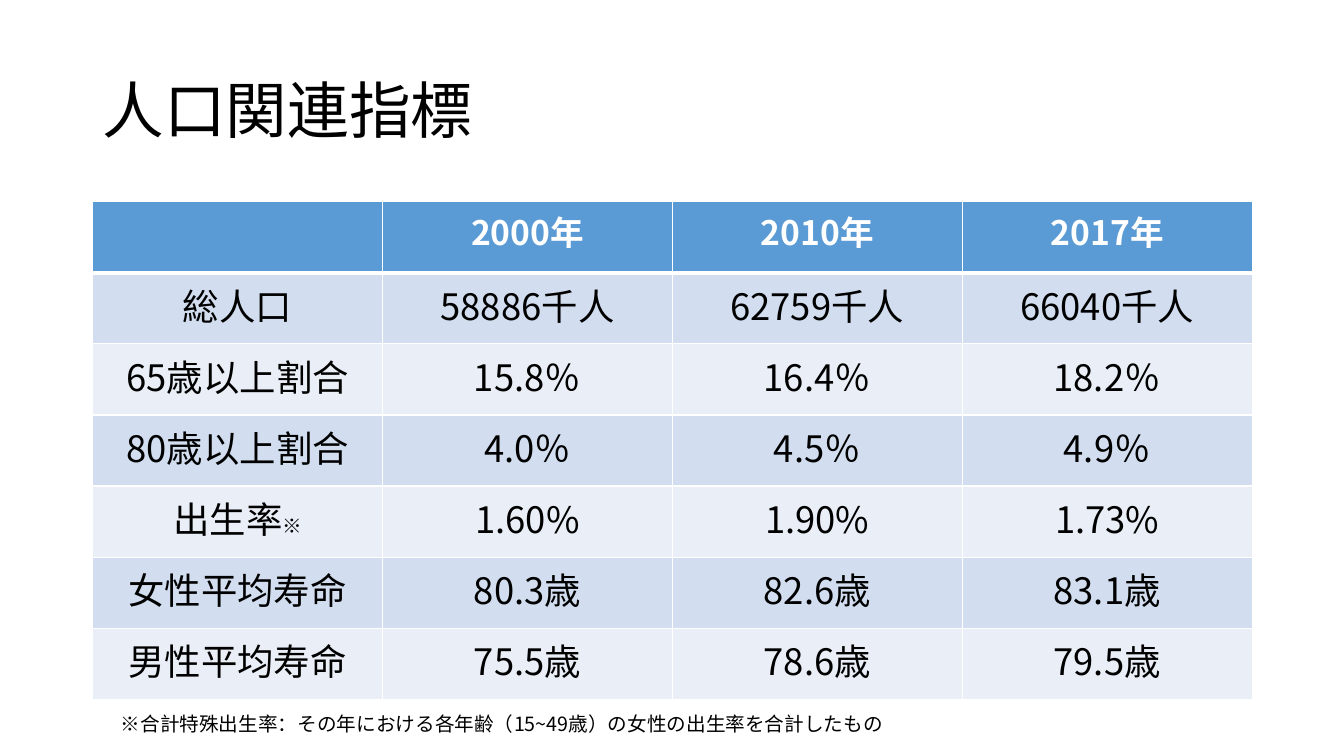
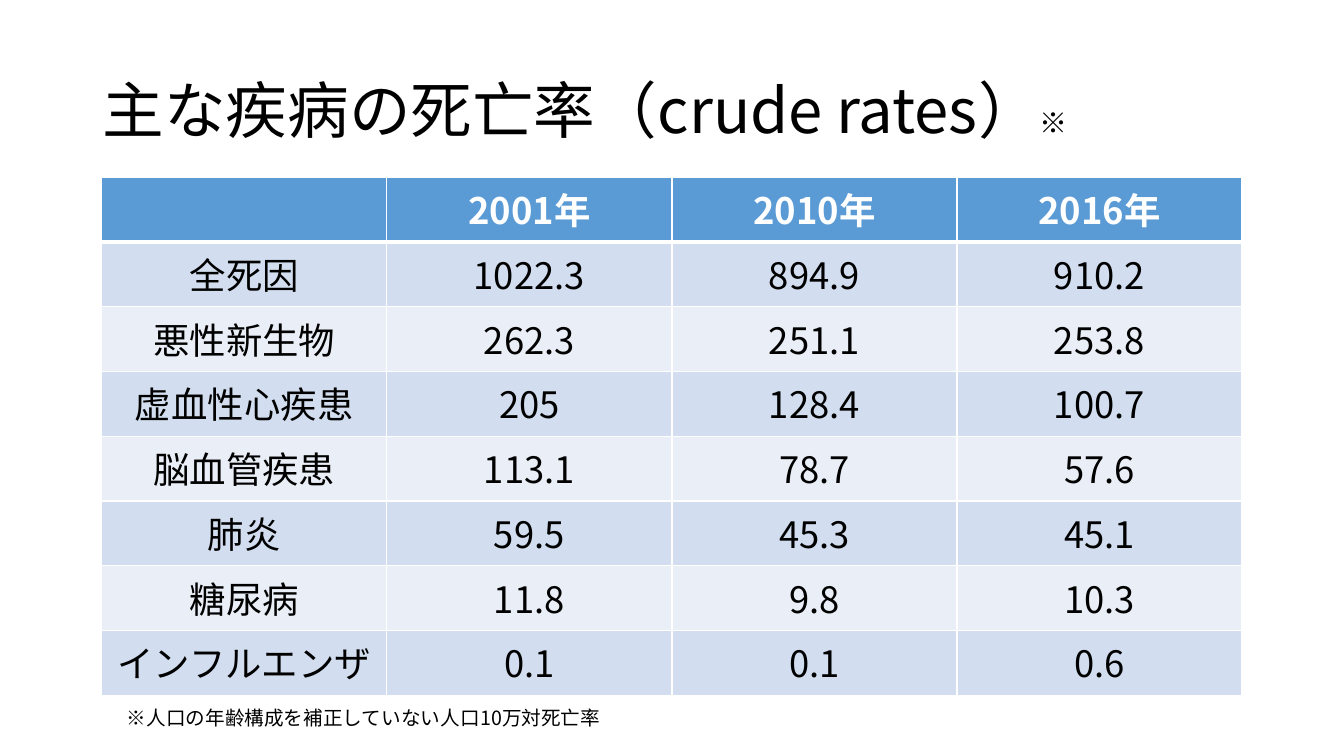
from lxml import etree
from pptx import Presentation
from pptx.dml.color import RGBColor
from pptx.enum.text import MSO_ANCHOR, PP_ALIGN
from pptx.oxml.ns import qn
from pptx.util import Inches, Pt

MIDDLE, TOP = MSO_ANCHOR.MIDDLE, MSO_ANCHOR.TOP
CENTER = PP_ALIGN.CENTER

FONT = "Noto Sans CJK JP"
BLACK, WHITE = "000000", "FFFFFF"
HEADER_FILL = "5B9BD5"
BAND_FILLS = ("D2DEEF", "EAEFF7")
TITLE_BOX = (0.92, 0.4, 11.5, 1.45)
TITLE_SIZE, BODY_SIZE, NOTE_SIZE = 44, 26, 14
RULE, HEADER_RULE = 1, 3
MARK = "※"

SLIDES = [
    {
        "title": "人口関連指標",
        "mark_size": 14,
        "header_size": 24,
        "table_box": (0.92, 2, 11.5, 4.94),
        "rows": [
            ("", "2000年", "2010年", "2017年"),
            ("総人口", "58886千人", "62759千人", "66040千人"),
            ("65歳以上割合", "15.8％", "16.4％", "18.2％"),
            ("80歳以上割合", "4.0％", "4.5％", "4.9％"),
            ("出生率※", "1.60%", "1.90%", "1.73%"),
            ("女性平均寿命", "80.3歳", "82.6歳", "83.1歳"),
            ("男性平均寿命", "75.5歳", "78.6歳", "79.5歳"),
        ],
        "note": "※合計特殊出生率：その年における各年齢（15~49歳）の女性の出生率を合計したもの",
        "note_box": (1.1, 7.01, 11.4, 0.34),
    },
    {
        "title": "主な疾病の死亡率（crude rates）※",
        "mark_size": 20,
        "header_size": 26,
        "table_box": (1.01, 1.76, 11.31, 5.14),
        "rows": [
            ("", "2001年", "2010年", "2016年"),
            ("全死因", "1022.3", "894.9", "910.2"),
            ("悪性新生物", "262.3", "251.1", "253.8"),
            ("虚血性心疾患", "205", "128.4", "100.7"),
            ("脳血管疾患", "113.1", "78.7", "57.6"),
            ("肺炎", "59.5", "45.3", "45.1"),
            ("糖尿病", "11.8", "9.8", "10.3"),
            ("インフルエンザ", "0.1", "0.1", "0.6"),
        ],
        "note": "※人口の年齢構成を補正していない人口10万対死亡率",
        "note_box": (1.16, 6.95, 7.39, 0.34),
    },
]


def rgb(hex_color):
    """Turn a hex string into a colour."""
    return RGBColor.from_string(hex_color)


def add_run(paragraph, text, size, color=BLACK, bold=False):
    """Append one run in the shared font."""
    run = paragraph.add_run()
    run.text = text
    run.font.size = Pt(size)
    run.font.bold = bold
    run.font.name = FONT
    run.font.color.rgb = rgb(color)
    etree.SubElement(run.font._element, qn("a:ea"), typeface=FONT)


def add_marked(paragraph, text, size, mark_size):
    """Write text whose closing reference mark is smaller."""
    body = text.removesuffix(MARK)
    add_run(paragraph, body, size)
    if body != text:
        add_run(paragraph, MARK, mark_size)


def add_text_box(slide, box, anchor):
    """Add a wrapping text box and return its paragraph."""
    frame = slide.shapes.add_textbox(*map(Inches, box)).text_frame
    frame.word_wrap = True
    frame.vertical_anchor = anchor
    return frame.paragraphs[0]


def style_cell(cell, fill, top, bottom):
    """Give a cell its white rules and its fill."""
    properties = cell._tc.get_or_add_tcPr()
    for side, width in (("L", RULE), ("R", RULE), ("T", top), ("B", bottom)):
        line = etree.SubElement(properties, qn(f"a:ln{side}"), w=str(Pt(width)))
        solid = etree.SubElement(line, qn("a:solidFill"))
        etree.SubElement(solid, qn("a:srgbClr"), val=WHITE)
    cell.fill.solid()
    cell.fill.fore_color.rgb = rgb(fill)


def add_indicator_table(slide, content):
    """Add the banded table of indicators by year."""
    rows = content["rows"]
    left, top, width, height = map(Inches, content["table_box"])
    table = slide.shapes.add_table(
        len(rows), len(rows[0]), left, top, width, height).table
    for column in table.columns:
        column.width = width // len(rows[0])
    for i, values in enumerate(rows):
        table.rows[i].height = height // len(rows)
        fill = BAND_FILLS[(i - 1) % 2] if i else HEADER_FILL
        rule_above = HEADER_RULE if i == 1 else RULE
        rule_below = RULE if i else HEADER_RULE
        for cell, value in zip(table.rows[i].cells, values):
            style_cell(cell, fill, rule_above, rule_below)
            paragraph = cell.text_frame.paragraphs[0]
            paragraph.alignment = CENTER
            if i:
                add_marked(paragraph, value, BODY_SIZE, content["mark_size"])
            elif value:
                add_run(paragraph, value, content["header_size"], WHITE, True)


def build_slide(deck, content):
    """Add one slide with title, table and footnote."""
    slide = deck.slides.add_slide(deck.slide_layouts[6])
    title = add_text_box(slide, TITLE_BOX, MIDDLE)
    title.line_spacing = 0.9
    add_marked(title, content["title"], TITLE_SIZE, content["mark_size"])
    add_indicator_table(slide, content)
    note = add_text_box(slide, content["note_box"], TOP)
    add_run(note, content["note"], NOTE_SIZE)


def main():
    """Build and save the deck."""
    deck = Presentation()
    deck.slide_width, deck.slide_height = Inches(13.33), Inches(7.5)
    for content in SLIDES:
        build_slide(deck, content)
    deck.save("out.pptx")


if __name__ == "__main__":
    main()
